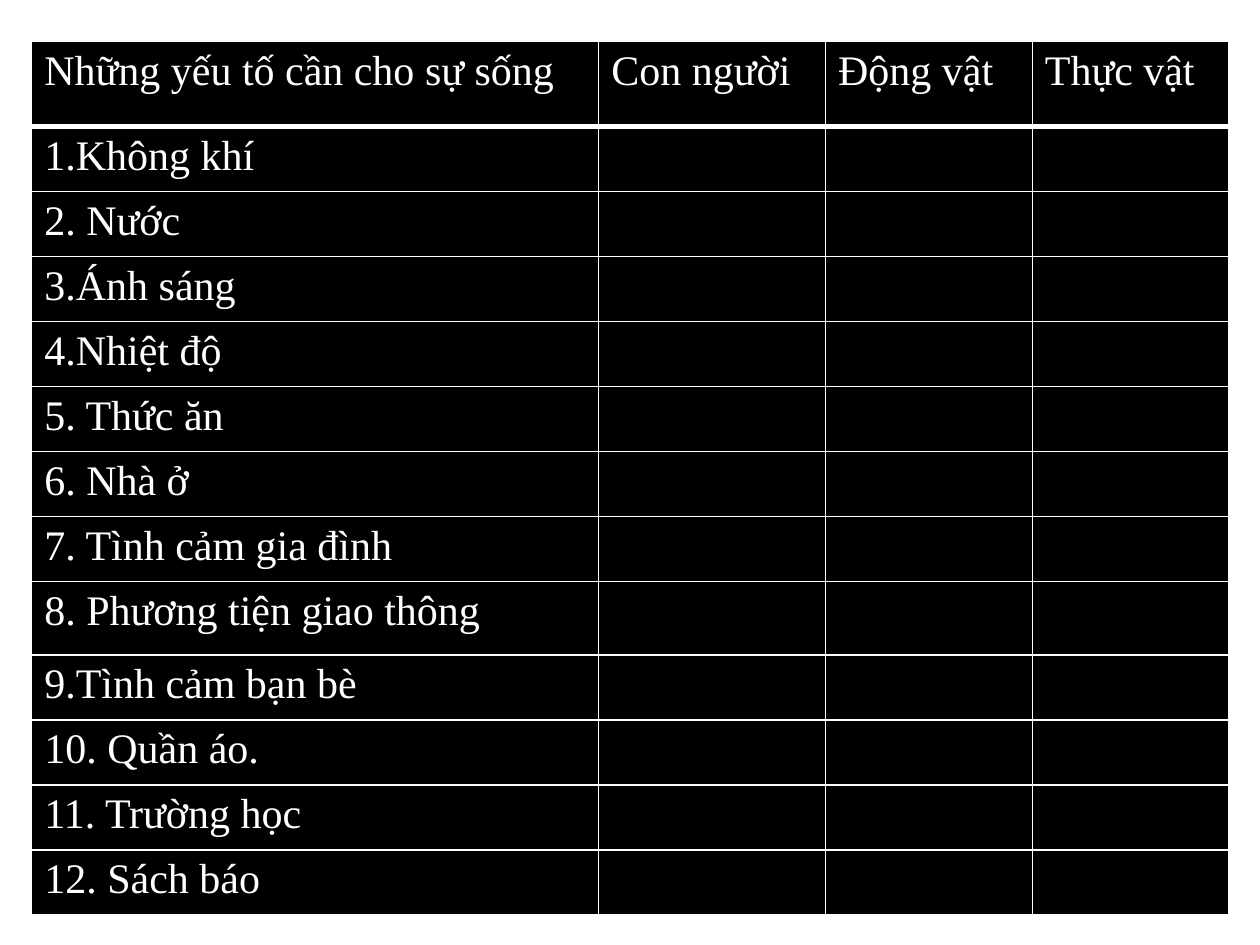
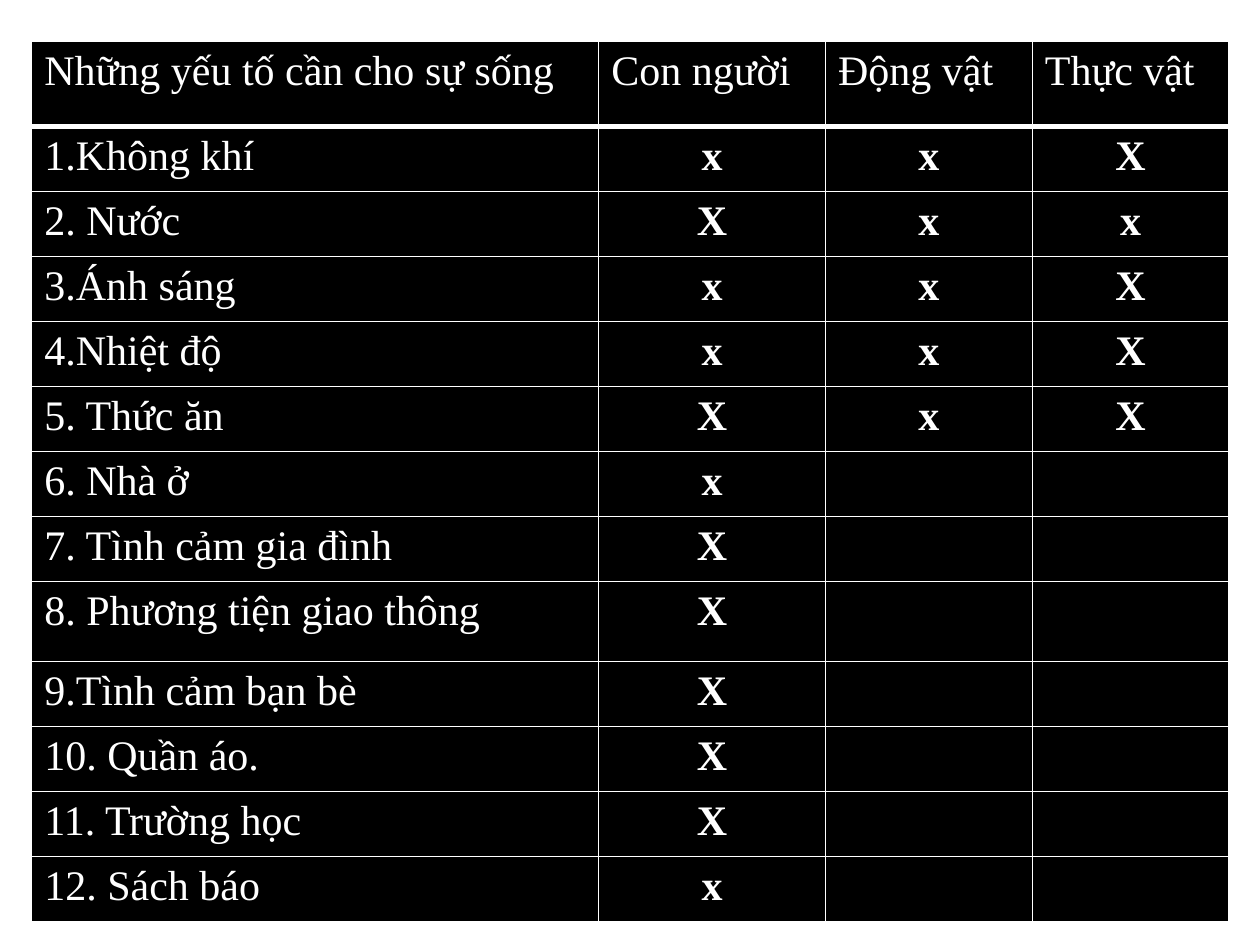
"""Two slides with a table of what people, animals and plants need to live."""
import lxml.etree
import pptx
import pptx.dml.color
import pptx.enum.text
import pptx.oxml.ns
import pptx.util
from dataclasses import dataclass

Cm, Pt = pptx.util.Cm, pptx.util.Pt
qn = pptx.oxml.ns.qn

HEADERS = ["Những yếu tố cần cho sự sống", "Con người", "Động vật", "Thực vật"]
NEEDS = [
    ("1.Không khí", "xxX"),
    ("2. Nước", "Xxx"),
    ("3.Ánh sáng", "xxX"),
    ("4.Nhiệt độ", "xxX"),
    ("5. Thức ăn", "XxX"),
    ("6. Nhà ở", "x"),
    ("7. Tình cảm gia đình", "X"),
    ("8. Phương tiện giao thông", "X"),
    ("9.Tình cảm bạn bè", "X"),
    ("10. Quần áo.", "X"),
    ("11. Trường học", "X"),
    ("12. Sách báo", "x"),
]
SLIDES = [
    {"answers": False, "transport_height": 1.48},
    {"answers": True, "transport_height": 1.62},
]
LEFT, TOP = 0.64, 0.84
COL_WIDTHS = [11.43, 4.57, 4.17, 3.96]
HEADER_HEIGHT, ROW_HEIGHT = 1.71, 1.31
TRANSPORT_ROW = 8


@dataclass(frozen=True)
class Theme:
    font: str = "Times New Roman"
    size: int = 24
    text: str = "FFFFFF"
    fill: str = "000000"
    border: str = "FFFFFF"
    thin: int = 1
    thick: int = 3


THEME = Theme()


def rgb(value):
    return pptx.dml.color.RGBColor.from_string(value)


def set_borders(cell, top, bottom):
    tc_pr = cell._tc.get_or_add_tcPr()
    sides = {"L": THEME.thin, "R": THEME.thin, "T": top, "B": bottom}
    for i, (side, width) in enumerate(sides.items()):
        ln = lxml.etree.Element(qn(f"a:ln{side}"), w=str(Pt(width)))
        fill = lxml.etree.SubElement(ln, qn("a:solidFill"))
        lxml.etree.SubElement(fill, qn("a:srgbClr"), val=THEME.border)
        tc_pr.insert(i, ln)


def fill_cell(cell, text, is_mark):
    cell.fill.solid()
    cell.fill.fore_color.rgb = rgb(THEME.fill)
    if not text:
        return
    p = cell.text_frame.paragraphs[0]
    if is_mark:
        p.alignment = pptx.enum.text.PP_ALIGN.CENTER
    r = p.add_run()
    r.text = text
    r.font.name = THEME.font
    r.font.size = Pt(THEME.size)
    r.font.bold = is_mark
    r.font.color.rgb = rgb(THEME.text)


def add_needs_table(s, answers, transport_height):
    rows = [HEADERS]
    rows += [[need, *(marks if answers else "").ljust(3)] for need, marks in NEEDS]
    heights = [HEADER_HEIGHT] + [ROW_HEIGHT] * len(NEEDS)
    heights[TRANSPORT_ROW] = transport_height
    sp = s.shapes.add_table(len(rows), len(HEADERS), Cm(LEFT), Cm(TOP),
                            Cm(sum(COL_WIDTHS)), Cm(sum(heights)))
    table = sp.table
    table.horz_banding = False
    for col, width in zip(table.columns, COL_WIDTHS):
        col.width = Cm(width)
    for i, (row, height) in enumerate(zip(rows, heights)):
        table.rows[i].height = Cm(height)
        top = THEME.thick if i == 1 else THEME.thin
        bottom = THEME.thick if i == 0 else THEME.thin
        for j, text in enumerate(row):
            cell = table.cell(i, j)
            fill_cell(cell, text.strip(), i > 0 and j > 0)
            set_borders(cell, top, bottom)


def main():
    prs = pptx.Presentation()
    prs.slide_width, prs.slide_height = Cm(25.4), Cm(19.05)
    for slide in SLIDES:
        s = prs.slides.add_slide(prs.slide_layouts[6])
        add_needs_table(s, **slide)
    prs.save("out.pptx")


if __name__ == "__main__":
    main()
